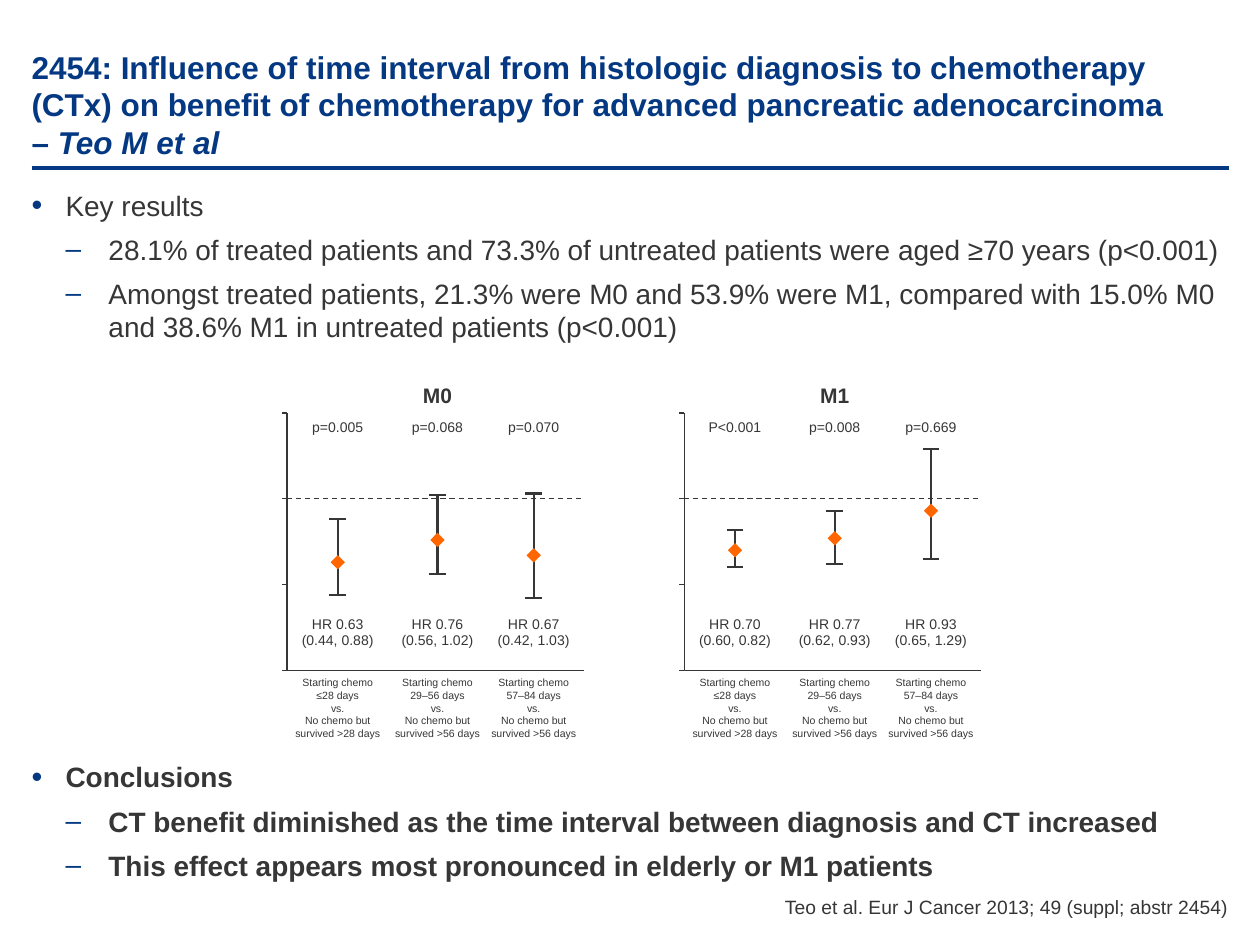
"""Build the slide on chemotherapy timing in pancreatic adenocarcinoma."""
from lxml import etree
from pptx import Presentation
from pptx import util as u
from pptx.dml.color import RGBColor
from pptx.enum import dml, shapes, text
from pptx.oxml import ns

NAVY, GREY, ORANGE = "043882", "363636", "FF6600"
LEFT, CENTRE, RIGHT = text.PP_ALIGN.LEFT, text.PP_ALIGN.CENTER, text.PP_ALIGN.RIGHT
TOP, BOTTOM = text.MSO_ANCHOR.TOP, text.MSO_ANCHOR.BOTTOM

AXIS_TOP, AXIS_BOTTOM, AXIS_WIDTH = 236, 383, 169.5
POINTS_PER_HR = 98
COLUMNS = (29, 86, 141)
PERIODS = (("≤28", 28), ("29–56", 56), ("57–84", 56))
PANELS = (
    ("M0", 164, (("p=0.005", 0.63, 0.44, 0.88),
                 ("p=0.068", 0.76, 0.56, 1.02),
                 ("p=0.070", 0.67, 0.42, 1.03))),
    ("M1", 391, (("P<0.001", 0.70, 0.60, 0.82),
                 ("p=0.008", 0.77, 0.62, 0.93),
                 ("p=0.669", 0.93, 0.65, 1.29))),
)
BODY = (
    (0, False, 0, "Key results"),
    (1, False, 0, "28.1% of treated patients and 73.3% of untreated patients "
                  "were aged ≥70 years (p<0.001)"),
    (1, False, 0, "Amongst treated patients, 21.3% were M0 and 53.9% were M1, "
                  "compared with 15.0% M0 and 38.6% M1 in untreated patients (p<0.001)"),
    (0, True, 232, "Conclusions"),
    (1, True, 0, "CT benefit diminished as the time interval between diagnosis "
                 "and CT increased"),
    (1, True, 0, "This effect appears most pronounced in elderly or M1 patients"),
)


def colour(value):
    """Turn a hex string into a colour."""
    return RGBColor.from_string(value)


def hr_height(ratio):
    """Give the vertical position of a hazard ratio."""
    return AXIS_BOTTOM - POINTS_PER_HR * ratio


class Painter:
    """Hold the style and the current slide."""

    font = "Arial"

    def __init__(self, page):
        """Start on a page."""
        self.page = page

    def style(self, para, size, shade=GREY, bold=False, align=LEFT):
        """Format a paragraph and its runs."""
        para.alignment = align
        for span in para.runs:
            span.font.name = self.font
            span.font.size = u.Pt(size)
            span.font.bold = bold
            span.font.color.rgb = colour(shade)

    def frame(self, box, insets, anchor=TOP, wrap=True):
        """Set the margins, anchor and wrapping of a box."""
        frame = box.text_frame
        frame.auto_size = text.MSO_AUTO_SIZE.NONE
        frame.word_wrap = wrap
        frame.vertical_anchor = anchor
        (frame.margin_left, frame.margin_top,
         frame.margin_right, frame.margin_bottom) = map(u.Pt, insets)
        return frame

    def title(self, words, author):
        """Fill the title placeholder and end it with an italic author."""
        box = self.page.shapes.title
        box.left, box.top, box.width, box.height = map(u.Pt, (18, 18, 684, 74))
        para = self.frame(box, (0, 3.6, 0, 0), BOTTOM).paragraphs[0]
        para.text = words
        span = para.add_run()
        span.text = author
        self.style(para, 18, NAVY, True)
        span.font.italic = True

    def label(self, words, left, top, width, height, size, bold=False,
              align=CENTRE, insets=(0, 3.6, 0, 3.6), anchor=TOP):
        """Add a short text that does not wrap."""
        box = self.page.shapes.add_textbox(*map(u.Pt, (left, top, width, height)))
        frame = self.frame(box, insets, anchor, False)
        frame.text = words
        for para in frame.paragraphs:
            self.style(para, size, GREY, bold, align)

    def bullet(self, para, level):
        """Give a paragraph the indent and bullet of its level."""
        margin, indent, size, mark = ((19.5, -19.5, 110, "•"), (44, -24.5, 100, "–"))[level]
        para.level = level
        props = para._p.get_or_add_pPr()
        props.set("marL", str(u.Pt(margin)))
        props.set("indent", str(u.Pt(indent)))
        shade = etree.SubElement(props, ns.qn("a:buClr"))
        etree.SubElement(shade, ns.qn("a:srgbClr"), val=NAVY)
        etree.SubElement(props, ns.qn("a:buSzPct"), val=str(size * 1000))
        etree.SubElement(props, ns.qn("a:buFont"), typeface=self.font)
        etree.SubElement(props, ns.qn("a:buChar"), char=mark)

    def body(self, items, left, top, width, height):
        """Add the bulleted text."""
        box = self.page.shapes.add_textbox(*map(u.Pt, (left, top, width, height)))
        frame = self.frame(box, (0, 3.6, 0, 3.6))
        frame.text = "\n".join(words for *_, words in items)
        for para, (level, bold, before, _) in zip(frame.paragraphs, items):
            self.style(para, 16, GREY, bold)
            para.space_before, para.space_after = u.Pt(before), u.Pt(6)
            self.bullet(para, level)

    def line(self, x1, y1, x2, y2, weight=0.75, shade=GREY, dashed=False):
        """Add a straight line."""
        line = self.page.shapes.add_connector(
            shapes.MSO_CONNECTOR.STRAIGHT, *map(u.Pt, (x1, y1, x2, y2)))
        line.line.color.rgb = colour(shade)
        line.line.width = u.Pt(weight)
        if dashed:
            line.line.dash_style = dml.MSO_LINE.DASH
        etree.SubElement(line._element.spPr, ns.qn("a:effectLst"))

    def axes(self, left):
        """Add the axes, ticks and reference line of a panel."""
        right = left + AXIS_WIDTH
        builder = self.page.shapes.build_freeform(u.Pt(left), u.Pt(AXIS_TOP))
        builder.add_line_segments(
            [(u.Pt(left), u.Pt(AXIS_BOTTOM)), (u.Pt(right), u.Pt(AXIS_BOTTOM))], close=False)
        outline = builder.convert_to_shape()
        outline.shadow.inherit = False
        outline.fill.background()
        outline.line.color.rgb = colour(GREY)
        outline.line.width = u.Pt(0.75)
        for ratio in (0, 0.5, 1, 1.5):
            self.line(left, hr_height(ratio), left - 3, hr_height(ratio))
        self.line(left, hr_height(1), right, hr_height(1), dashed=True)

    def interval(self, x, ratio, low, high):
        """Add a hazard ratio with its confidence interval."""
        self.line(x, hr_height(high), x, hr_height(low), 1.25)
        for end in (high, low):
            self.line(x - 4.75, hr_height(end), x + 4.75, hr_height(end), 1.25)
        side = 5.8
        marker = self.page.shapes.add_shape(
            shapes.MSO_SHAPE.RECTANGLE, u.Pt(x - side / 2),
            u.Pt(hr_height(ratio) - side / 2), u.Pt(side), u.Pt(side))
        marker.rotation = 315
        marker.shadow.inherit = False
        marker.fill.solid()
        marker.fill.fore_color.rgb = colour(ORANGE)
        marker.line.fill.background()

    def panel(self, name, left, results):
        """Add one forest plot."""
        self.axes(left)
        self.label(name, left + COLUMNS[1] - 16, 215, 32, 22, 12, True)
        for offset, (days, survived), (p_value, ratio, low, high) in zip(
                COLUMNS, PERIODS, results):
            x = left + offset
            self.interval(x, ratio, low, high)
            self.label(p_value, x - 22, 235.5, 44, 17, 8)
            self.label(f"HR {ratio:.2f}\n({low:.2f}, {high:.2f})", x - 28, 348, 56, 27, 8)
            self.label(f"Starting chemo\v{days} days\vvs.\vNo chemo but\v"
                       f"survived >{survived} days", x - 32, 383, 64, 44, 6)


def main():
    """Build and save the deck."""
    deck = Presentation()
    deck.slide_width, deck.slide_height = u.Pt(720), u.Pt(540)
    painter = Painter(deck.slides.add_slide(deck.slide_layouts[5]))
    painter.line(18, 96, 702, 96, 2.25, NAVY)
    painter.title("2454: Influence of time interval from histologic diagnosis to "
                  "chemotherapy (CTx) on benefit of chemotherapy for advanced "
                  "pancreatic adenocarcinoma \v– ", "Teo M et al")
    painter.body(BODY, 18, 104, 696, 418)
    for name, left, results in PANELS:
        painter.panel(name, left, results)
    painter.label("Teo et al. Eur J Cancer 2013; 49 (suppl; abstr 2454)",
                  447, 511, 255, 14, 11, align=RIGHT, insets=(0, 0, 0, 0), anchor=BOTTOM)
    deck.save("out.pptx")


if __name__ == "__main__":
    main()
